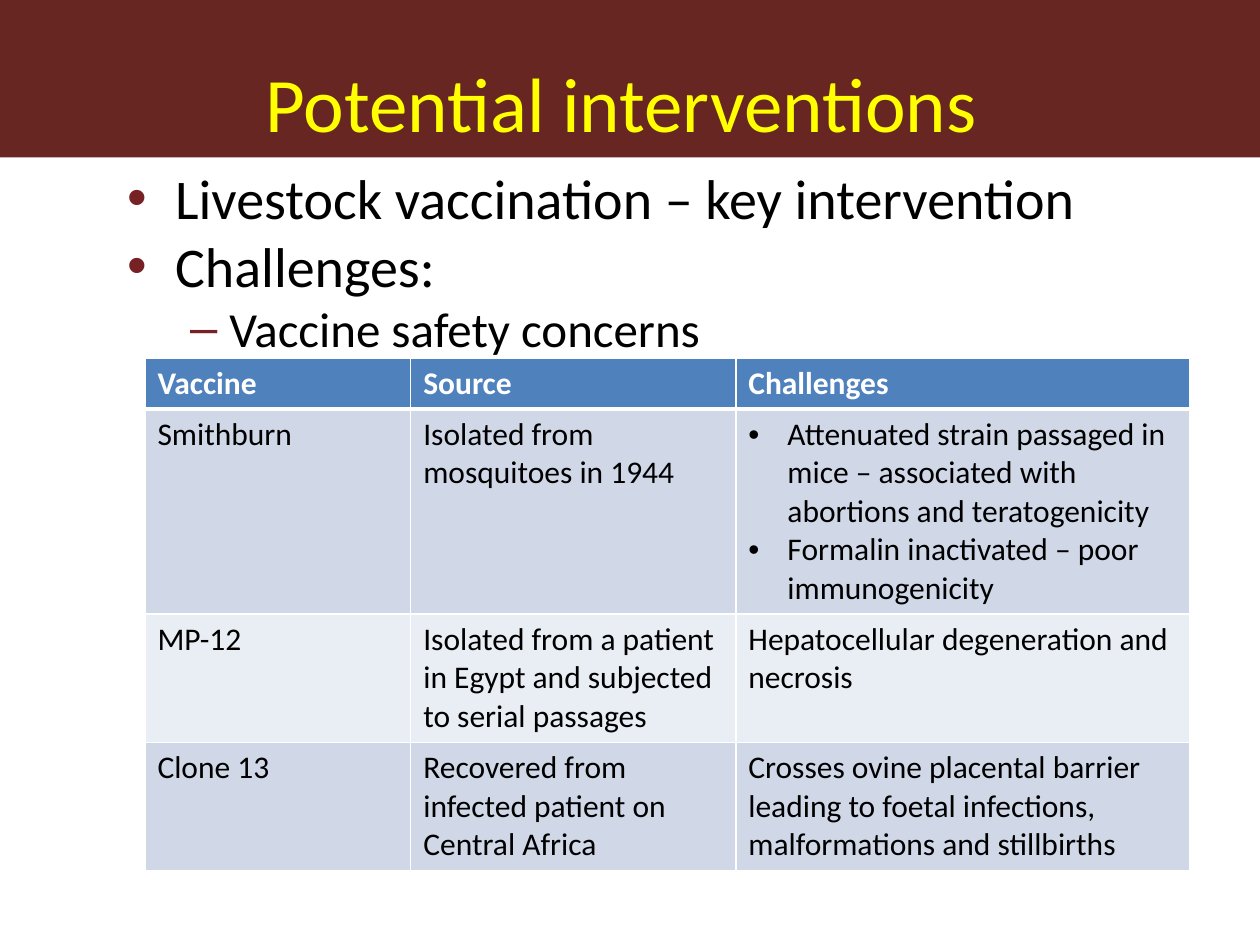
from lxml import etree
from pptx import Presentation
from pptx.dml.color import RGBColor
from pptx.enum.shapes import MSO_SHAPE
from pptx.enum.text import MSO_ANCHOR, MSO_AUTO_SIZE, PP_ALIGN
from pptx.oxml.ns import qn
from pptx.util import Inches, Pt

RECTANGLE = MSO_SHAPE.RECTANGLE
TOP, MIDDLE = MSO_ANCHOR.TOP, MSO_ANCHOR.MIDDLE
NO_FIT = MSO_AUTO_SIZE.NONE
LEFT, CENTER = PP_ALIGN.LEFT, PP_ALIGN.CENTER

COLOURS = {"banner": "682622", "title": "FFFF00", "text": "000000",
           "bullet": "762123", "header": "4F81BD", "dark band": "D0D8E8",
           "light band": "E9EDF4", "white": "FFFFFF"}


def format_text(para, size, colour, bold=False):
    for name, value in {"name": "Calibri", "size": Pt(size), "bold": bold}.items():
        setattr(para.font, name, value)
    para.font.color.rgb = RGBColor.from_string(COLOURS[colour])


def add_bullet(para, symbol, indent, hang, colour):
    """Give a paragraph a hanging bullet; indent and hang are in inches."""
    props = para._p.get_or_add_pPr()
    props.set("marL", str(Inches(indent)))
    props.set("indent", str(-Inches(hang)))
    paint = etree.SubElement(props, qn("a:buClr"))
    etree.SubElement(paint, qn("a:srgbClr"), val=COLOURS[colour])
    etree.SubElement(props, qn("a:buFont"), typeface="Arial")
    etree.SubElement(props, qn("a:buChar"), char=symbol)


deck = Presentation()
deck.slide_width, deck.slide_height = Inches(10), Inches(7.5)
width, height = deck.slide_width, deck.slide_height
banner_height = height // 6
page = deck.slides.add_slide(deck.slide_layouts[1])
title, body = page.placeholders

# Banner behind the title
banner = page.shapes.add_shape(RECTANGLE, 0, 0, width, banner_height)
banner.shadow.inherit = False
banner.fill.solid()
banner.fill.fore_color.rgb = RGBColor.from_string(COLOURS["banner"])
banner.line.fill.background()
title._element.addprevious(banner._element)

# Title and list
places = [(title, 0, 0, width, banner_height, MIDDLE),
          (body, Inches(0.91), banner_height, Inches(8.78), Inches(5.42), TOP)]
for box, *place, anchor in places:
    box.left, box.top, box.width, box.height = place
    frame = box.text_frame
    frame.word_wrap = True
    frame.auto_size = NO_FIT
    frame.vertical_anchor = anchor

title.text_frame.text = "Potential interventions "
heading = title.text_frame.paragraphs[0]
heading.alignment = CENTER
heading.line_spacing = 1.5
format_text(heading, 44, "title")

LEVELS = [("•", 0.38, 0.38, 32), ("–", 0.81, 0.31, 28)]
points = [("Livestock vaccination – key intervention", 0),
          ("Challenges:", 0),
          ("Vaccine safety concerns", 1)]
body.text_frame.text = "\n".join(words for words, level in points)
for para, (words, level) in zip(body.text_frame.paragraphs, points):
    symbol, indent, hang, size = LEVELS[level]
    para.level = level
    para.space_before = Pt(0)
    add_bullet(para, symbol, indent, hang, "bullet")
    format_text(para, size, "text")

# Vaccine table
rows = [
    ["Vaccine", "Source", "Challenges"],
    ["Smithburn", "Isolated from mosquitoes in 1944",
     "Attenuated strain passaged in mice – associated with abortions and "
     "teratogenicity\nFormalin inactivated – poor immunogenicity"],
    ["MP-12", "Isolated from a patient in Egypt and subjected to serial passages",
     "Hepatocellular degeneration and necrosis"],
    ["Clone 13", "Recovered from infected patient on Central Africa",
     "Crosses ovine placental barrier leading to foetal infections, "
     "malformations and stillbirths"],
]
column_widths = [2.11, 2.58, 3.6]
row_heights = [0.4, 1.62, 1.02, 1.02]
fills = ["header", "dark band", "light band", "dark band"]

table = page.shapes.add_table(len(rows), len(column_widths), Inches(1.15), Inches(2.84),
                              Inches(sum(column_widths)), Inches(sum(row_heights))).table
for column, size in zip(table.columns, column_widths):
    column.width = Inches(size)
for row, size in zip(table.rows, row_heights):
    row.height = Inches(size)

for r, row in enumerate(rows):
    is_header = r == 0
    borders = {"a:lnL": 1, "a:lnR": 1, "a:lnT": 3 if r == 1 else 1,
               "a:lnB": 3 if is_header else 1}
    for c, words in enumerate(row):
        cell = table.cell(r, c)
        cell.text = words
        cell_props = cell._tc.get_or_add_tcPr()
        for side, points_wide in borders.items():
            edge = etree.SubElement(cell_props, qn(side), w=str(Pt(points_wide)))
            paint = etree.SubElement(edge, qn("a:solidFill"))
            etree.SubElement(paint, qn("a:srgbClr"), val=COLOURS["white"])
        cell.fill.solid()
        cell.fill.fore_color.rgb = RGBColor.from_string(COLOURS[fills[r]])
        paras = cell.text_frame.paragraphs
        for para in paras:
            para.alignment = LEFT
            if len(paras) > 1:
                add_bullet(para, "•", 0.31, 0.31, "text")
            format_text(para, 18, "white" if is_header else "text", is_header)

deck.save("out.pptx")
